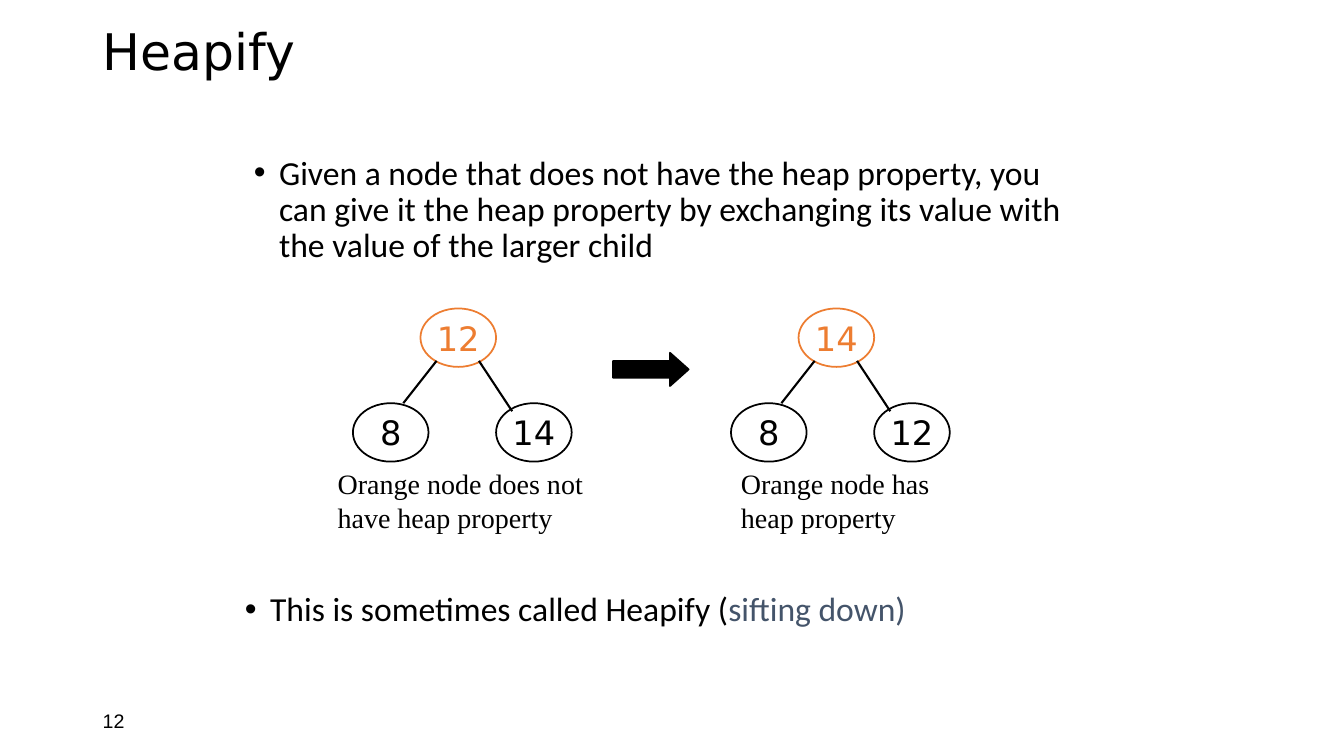
from lxml.etree import SubElement
from pptx import Presentation
from pptx.dml.color import RGBColor
from pptx.enum.shapes import MSO_CONNECTOR, MSO_SHAPE
from pptx.enum.text import MSO_ANCHOR, PP_ALIGN
from pptx.oxml.ns import qn
from pptx.util import Pt

BLACK, ORANGE, SLATE = "000000", "ED7D31", "44546A"
SANS, BODY, SERIF = "DejaVu Sans", "Calibri", "Times New Roman"

# box, runs (text, colour), size, font
TITLE = ((92, 15, 1150, 77), [("Heapify", BLACK)], 36, SANS)
NUMBER = ((92, 695, 300, 40), [("12", BLACK)], 14, "Arial")
POINTS = [
    ((242, 150, 850, 167),
     [("Given a node that does not have the heap property, you can give it "
       "the heap property by exchanging its value with the value of the "
       "larger child", BLACK)], 24, BODY),
    ((233, 583, 858, 142),
     [("This is sometimes called Heapify (", BLACK),
      ("sifting down)", SLATE)], 24, BODY),
]
# left edge, values (root, left, right), caption box, caption
TREES = [
    (350, ("12", "8", "14"), (325, 458, 283, 77),
     "Orange node does not have heap property"),
    (725, ("14", "8", "12"), (725, 458, 217, 77),
     "Orange node has heap property"),
]
TOP = 306
NODE = (75, 58)
# offsets from a tree's left edge and top
NODES = [(67, 0, ORANGE), (0, 94, BLACK), (142, 94, BLACK)]
EDGES = [(83, 52, 50, 94), (125, 52, 158, 102)]
ARROW = (608, 350, 75, 33)


def px(*nums):
    """Turn lengths of 100 px to the inch into EMU."""
    return [num * 9144 for num in nums]


def color(code):
    return RGBColor.from_string(code)


def write(frame, runs, size, font):
    para = frame.paragraphs[0]
    for text, code in runs:
        run = para.add_run()
        run.text = text
        run.font.size = Pt(size)
        run.font.name = font
        run.font.color.rgb = color(code)
    return para


def label(box, runs, size, font, anchor=MSO_ANCHOR.TOP):
    frame = shapes.add_textbox(*px(*box)).text_frame
    frame.word_wrap = True
    frame.vertical_anchor = anchor
    return write(frame, runs, size, font)


def bullet(para):
    props = para._p.get_or_add_pPr()
    indent = px(25)[0]
    props.set("marL", str(indent))
    props.set("indent", str(-indent))
    SubElement(props, qn("a:buFont"), typeface="Arial")
    SubElement(props, qn("a:buChar"), char="•")
    para.line_spacing = 0.9


def outline(kind, box, code):
    shape = shapes.add_shape(kind, *px(*box))
    shape.shadow.inherit = False
    shape.fill.background()
    shape.line.color.rgb = color(code)
    shape.line.width = Pt(1.25)
    return shape


def node(x, y, text, code):
    frame = outline(MSO_SHAPE.OVAL, (x, y, *NODE), code).text_frame
    frame.word_wrap = False
    frame.vertical_anchor = MSO_ANCHOR.MIDDLE
    write(frame, [(text, code)], 24, SANS).alignment = PP_ALIGN.CENTER


def edge(*ends):
    line = shapes.add_connector(MSO_CONNECTOR.STRAIGHT, *px(*ends))
    line.line.color.rgb = color(BLACK)
    line.line.width = Pt(1.5)
    SubElement(line._element.spPr, qn("a:effectLst"))


def tree(left, values, box, caption):
    for (dx, dy, code), text in zip(NODES, values):
        node(left + dx, TOP + dy, text, code)
    for x1, y1, x2, y2 in EDGES:
        edge(left + x1, TOP + y1, left + x2, TOP + y2)
    label(box, [(caption, BLACK)], 20, SERIF)


deck = Presentation()
deck.slide_width, deck.slide_height = px(1333, 750)
shapes = deck.slides.add_slide(deck.slide_layouts[6]).shapes

label(*NUMBER, MSO_ANCHOR.MIDDLE)
label(*TITLE, MSO_ANCHOR.MIDDLE).line_spacing = 0.9
for point in POINTS:
    bullet(label(*point))
for part in TREES:
    tree(*part)

arrow = outline(MSO_SHAPE.RIGHT_ARROW, ARROW, BLACK)
arrow.adjustments[1] = 0.56
arrow.fill.solid()
arrow.fill.fore_color.rgb = color(BLACK)

deck.save("out.pptx")
